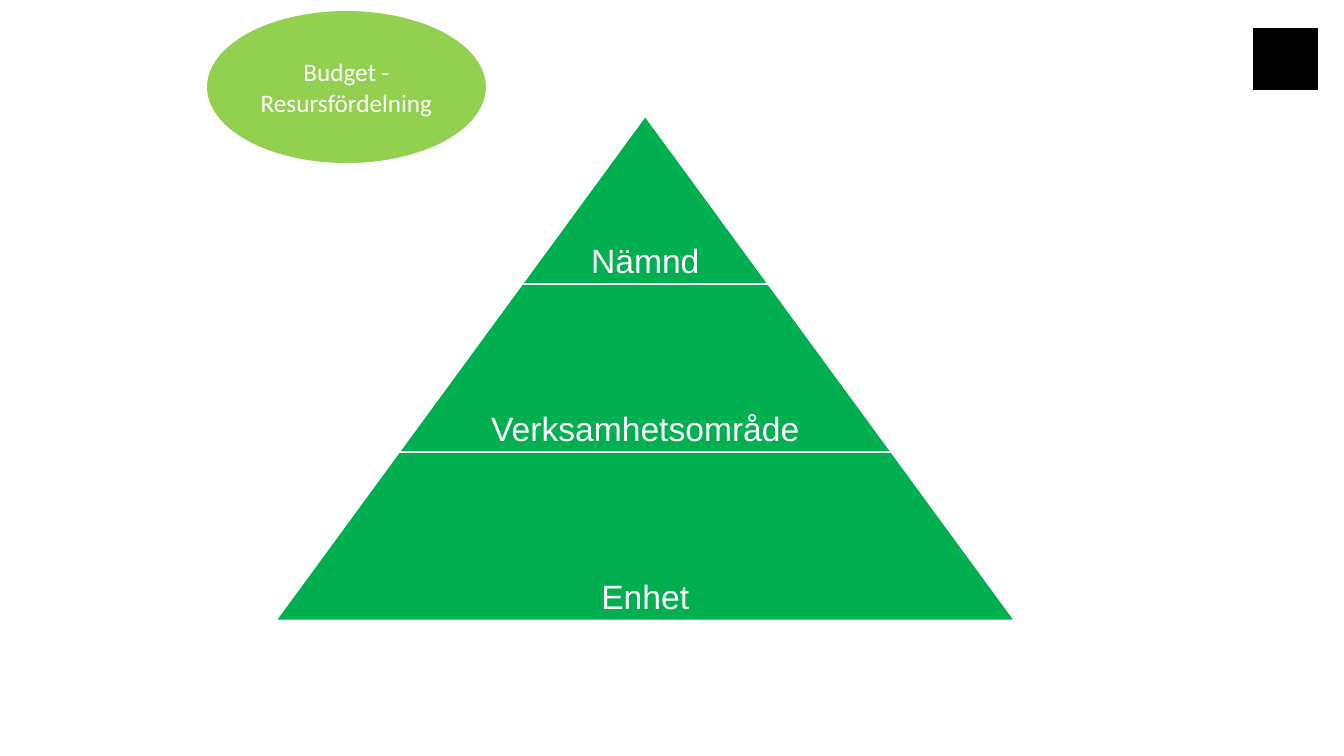
from pptx import Presentation
from pptx.dml.color import RGBColor
from pptx.enum.shapes import MSO_SHAPE as Shape
from pptx.enum.text import MSO_ANCHOR as Anchor, PP_ALIGN as Align
from pptx.util import Pt

WHITE, BLACK = "FFFFFF", "000000"
GREEN, LIGHT_GREEN = "00B050", "92D050"

LEVELS = ["Nämnd", "Verksamhetsområde", "Enhet"]
APEX_X, APEX_Y = 460.9, 83
LEVEL_HEIGHT = 120
SIDE_STEP = 87.9  # how far each sloping side moves outwards per level


def color(hex_value):
    return RGBColor.from_string(hex_value)


def add_filled_shape(slide, kind, left, top, width, height, fill, line, line_width):
    shape = slide.shapes.add_shape(kind, Pt(left), Pt(top), Pt(width), Pt(height))
    shape.shadow.inherit = False
    shape.fill.solid()
    shape.fill.fore_color.rgb = color(fill)
    shape.line.color.rgb = color(line)
    shape.line.width = Pt(line_width)
    return shape


def add_label(shape, text, font_name, size, anchor):
    frame = shape.text_frame
    frame.vertical_anchor = anchor
    paragraph = frame.paragraphs[0]
    paragraph.alignment = Align.CENTER
    run = paragraph.add_run()
    run.text = text
    run.font.name = font_name
    run.font.size = Pt(size)
    run.font.color.rgb = color(WHITE)
    return frame


def add_pyramid_level(slide, index, text):
    half_width = SIDE_STEP * (index + 1)
    level = add_filled_shape(
        slide, Shape.TRAPEZOID, APEX_X - half_width, APEX_Y + index * LEVEL_HEIGHT,
        2 * half_width, LEVEL_HEIGHT, GREEN, WHITE, 1)
    level.adjustments[0] = SIDE_STEP / LEVEL_HEIGHT
    frame = add_label(level, text, "Arial", 24, Anchor.BOTTOM)
    frame.word_wrap = False
    frame.margin_left = frame.margin_right = Pt(2.4)
    frame.margin_top = frame.margin_bottom = Pt(2.4)
    frame.paragraphs[0].line_spacing = 0.9


def add_budget_bubble(slide):
    bubble = add_filled_shape(
        slide, Shape.OVAL, 148.2, 8.2, 198.6, 108, LIGHT_GREEN, LIGHT_GREEN, 0.5)
    frame = add_label(bubble, "Budget - Resursfördelning", "Calibri", 18, Anchor.MIDDLE)
    frame.word_wrap = True


def main():
    presentation = Presentation()
    presentation.slide_width, presentation.slide_height = Pt(960), Pt(540)
    slide = presentation.slides.add_slide(presentation.slide_layouts[6])
    add_filled_shape(slide, Shape.RECTANGLE, 895, 20.5, 46, 43.5, BLACK, BLACK, 0.5)
    add_budget_bubble(slide)
    for index, text in enumerate(LEVELS):
        add_pyramid_level(slide, index, text)
    presentation.save("out.pptx")


if __name__ == "__main__":
    main()
